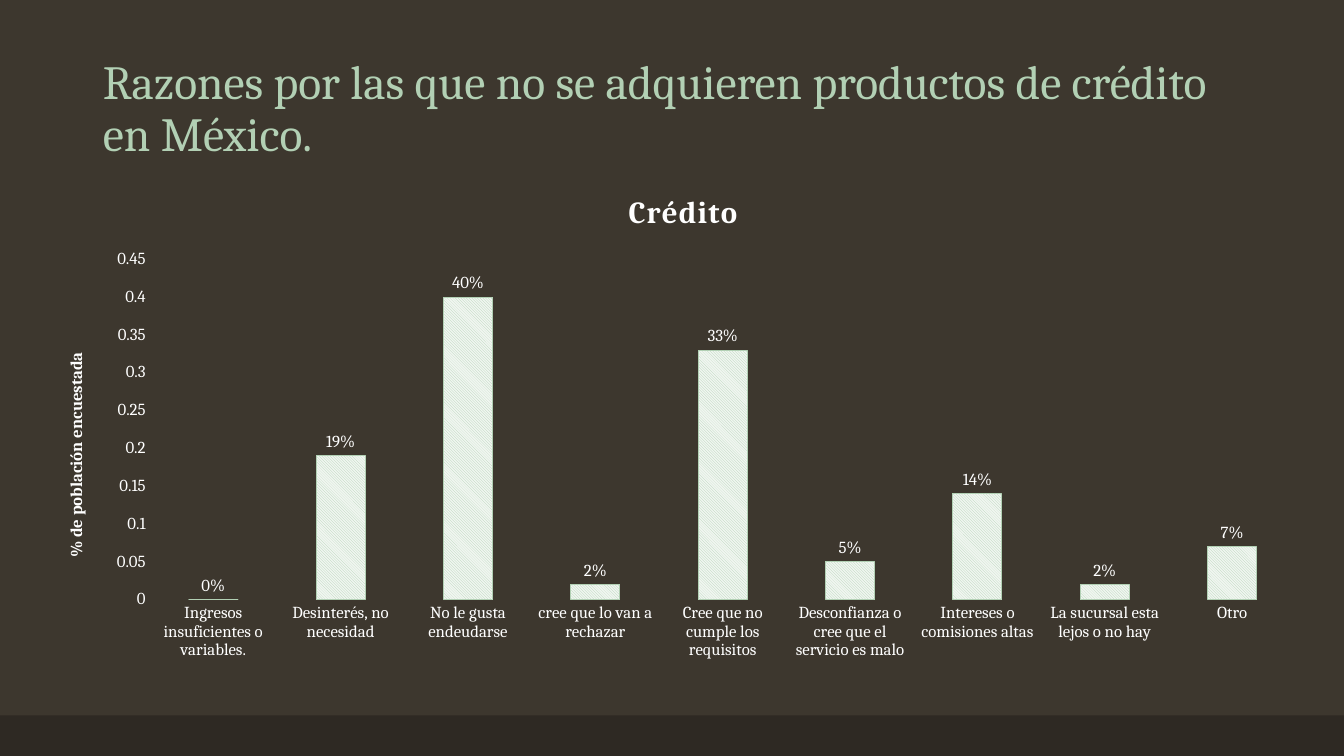
from dataclasses import dataclass
from pptx import Presentation
from pptx.chart.data import CategoryChartData
from pptx.dml.color import RGBColor
from pptx.enum.chart import XL_CHART_TYPE, XL_LABEL_POSITION, XL_TICK_MARK
from pptx.enum.dml import MSO_PATTERN
from pptx.enum.shapes import MSO_SHAPE
from pptx.enum.text import MSO_ANCHOR, PP_ALIGN
from pptx.util import Cm, Pt

TITLE = "Razones por las que no se adquieren productos de crédito en México."
CHART_TITLE = "Crédito"
AXIS_TITLE = "% de población encuestada"
REASONS = [
    ("Ingresos insuficientes o variables.", 0),
    ("Desinterés, no necesidad", 0.19),
    ("No le gusta endeudarse", 0.4),
    ("cree que lo van a rechazar", 0.02),
    ("Cree que no cumple los requisitos", 0.33),
    ("Desconfianza o cree que el servicio es malo", 0.05),
    ("Intereses o comisiones altas", 0.14),
    ("La sucursal esta lejos o no hay", 0.02),
    ("Otro", 0.07),
]


@dataclass(frozen=True)
class Theme:
    font: str = "Cambria"
    back: str = "3D372E"
    strip: str = "2E2923"
    accent: str = "B2D0B4"
    pale: str = "F0F6F0"
    text: str = "FFFFFF"
    title_size: float = 34
    chart_title_size: float = 22
    label_size: float = 12
    chart_size: float = 10


T = Theme()
W, H, STRIP_H = 33.87, 19.05, 1.02


def rgb(color):
    return RGBColor.from_string(color)


def style_font(font, size=T.label_size, color=T.text, bold=False):
    font.name, font.size, font.bold = T.font, Pt(size), bold
    font.color.rgb = rgb(color)


def write_text(tf, text, align=None, line_spacing=None, spacing=0, **fmt):
    p = tf.paragraphs[0]
    p.alignment, p.line_spacing = align, line_spacing
    r = p.add_run()
    r.text = text
    style_font(r.font, **fmt)
    if spacing:
        r._r.get_or_add_rPr().set("spc", str(spacing))


def add_strip(s):
    strip = s.shapes.add_shape(MSO_SHAPE.RECTANGLE, 0, Cm(H - STRIP_H), Cm(W), Cm(STRIP_H))
    strip.shadow.inherit = False
    strip.fill.solid()
    strip.fill.fore_color.rgb = rgb(T.strip)
    strip.line.fill.background()


def add_title(s):
    title = s.shapes.title
    title.left, title.top, title.width, title.height = Cm(2.34), Cm(1.02), Cm(29.21), Cm(3.18)
    tf = title.text_frame
    tf.word_wrap, tf.vertical_anchor = True, MSO_ANCHOR.BOTTOM
    write_text(tf, TITLE, align=PP_ALIGN.LEFT, line_spacing=0.9, size=T.title_size, color=T.accent)


def style_axis(axis):
    axis.has_major_gridlines = False
    axis.major_tick_mark = axis.minor_tick_mark = XL_TICK_MARK.NONE
    axis.format.line.fill.background()
    style_font(axis.tick_labels.font)


def add_reasons_chart(s):
    data = CategoryChartData()
    data.categories = [reason for reason, _ in REASONS]
    data.add_series(CHART_TITLE, [share for _, share in REASONS])
    chart = s.shapes.add_chart(
        XL_CHART_TYPE.COLUMN_CLUSTERED, Cm(1.12), Cm(4.32), Cm(32.18), Cm(12.57), data
    ).chart
    style_font(chart.font, size=T.chart_size)
    chart.has_legend = False
    chart.has_title = True
    write_text(chart.chart_title.text_frame, CHART_TITLE, size=T.chart_title_size, bold=True, spacing=100)
    chart.chart_title.include_in_layout = False

    for axis in (chart.category_axis, chart.value_axis):
        style_axis(axis)
    values = chart.value_axis
    values.minimum_scale, values.maximum_scale, values.major_unit = 0, 0.45, 0.05
    values.tick_labels.number_format = "General"
    values.tick_labels.number_format_is_linked = False
    write_text(values.axis_title.text_frame, AXIS_TITLE, bold=True)

    plot = chart.plots[0]
    plot.gap_width, plot.vary_by_categories = 160, False
    bars = plot.series[0]
    fill = bars.format.fill
    fill.patterned()
    fill.pattern = MSO_PATTERN.LIGHT_DOWNWARD_DIAGONAL
    fill.fore_color.rgb, fill.back_color.rgb = rgb(T.accent), rgb(T.pale)
    bars.format.line.color.rgb = rgb(T.accent)
    bars.format.line.width = Pt(0.75)
    labels = bars.data_labels
    labels.show_value = True
    labels.number_format, labels.number_format_is_linked = "0%", False
    labels.position = XL_LABEL_POSITION.OUTSIDE_END
    style_font(labels.font)


def main():
    prs = Presentation()
    prs.slide_width, prs.slide_height = Cm(W), Cm(H)
    s = prs.slides.add_slide(prs.slide_layouts[5])
    s.background.fill.solid()
    s.background.fill.fore_color.rgb = rgb(T.back)
    add_strip(s)
    add_title(s)
    add_reasons_chart(s)
    prs.save("out.pptx")


if __name__ == "__main__":
    main()
